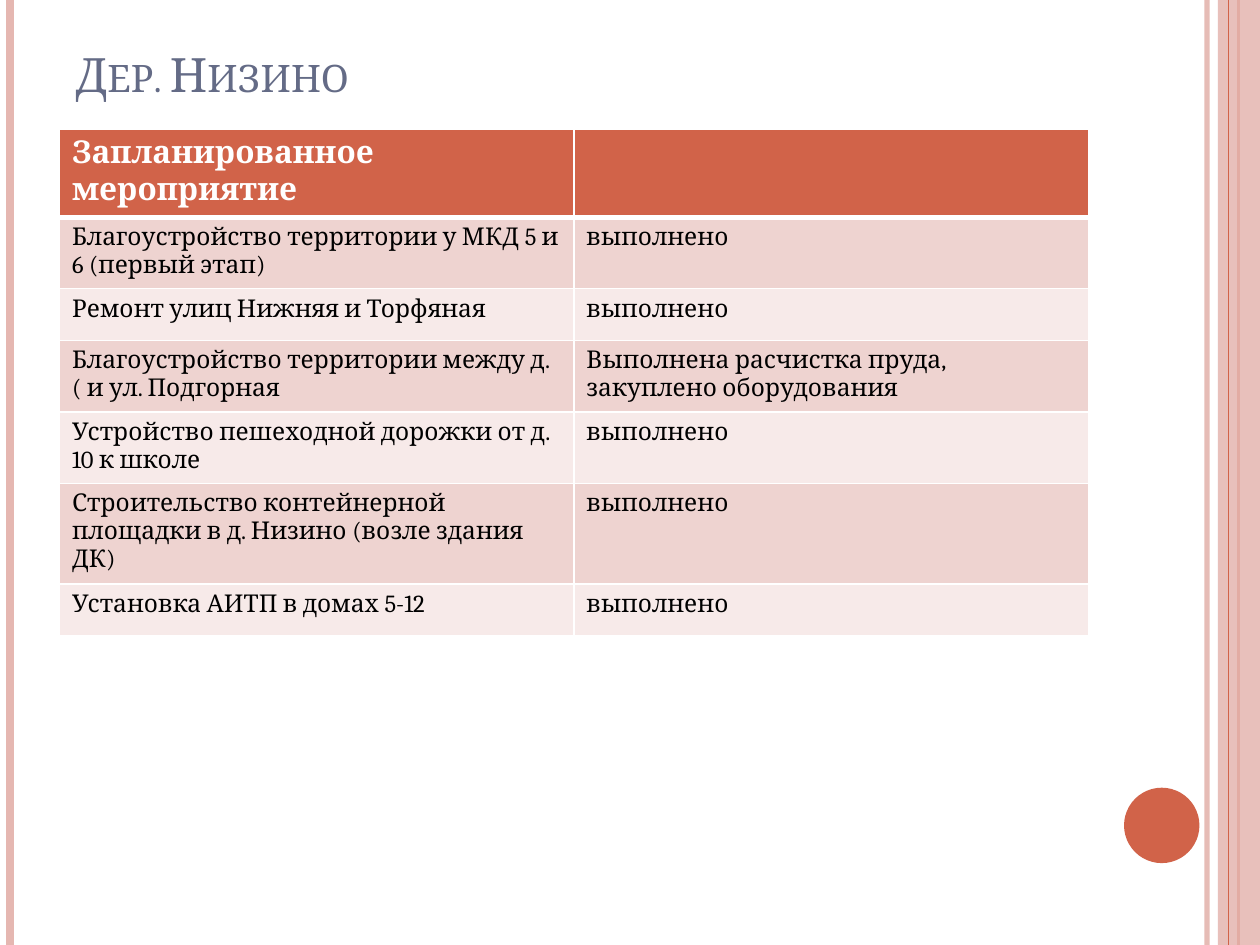
from lxml import etree
from pptx import Presentation
from pptx.dml.color import RGBColor
from pptx.enum.shapes import MSO_CONNECTOR, MSO_SHAPE
from pptx.enum.text import MSO_ANCHOR
from pptx.oxml.ns import qn
from pptx.util import Cm, Pt

STRAIGHT = MSO_CONNECTOR.STRAIGHT
RECTANGLE = MSO_SHAPE.RECTANGLE
OVAL = MSO_SHAPE.OVAL
BOTTOM = MSO_ANCHOR.BOTTOM

FONT = "Cambria"
COLORS = {
    "accent": "D16349",
    "stripe": "E5B7B1",
    "title": "646B86",
    "white": "FFFFFF",
    "black": "000000",
    "odd_row": "EED3D0",
    "even_row": "F7EAE9",
}
SLIDE_WIDTH, SLIDE_HEIGHT = 25.4, 19.05
ROW_HEIGHT = 1.04
DONE = "выполнено"
ROWS = [
    ("Запланированное мероприятие", ""),
    ("Благоустройство территории у МКД 5 и 6 (первый этап)", DONE),
    ("Ремонт улиц Нижняя и Торфяная", DONE),
    ("Благоустройство территории между д. ( и ул. Подгорная",
     "Выполнена расчистка пруда, закуплено оборудования"),
    ("Устройство пешеходной дорожки от д. 10 к школе", DONE),
    ("Строительство контейнерной площадки в д. Низино (возле здания ДК)", DONE),
    ("Установка АИТП в домах 5-12", DONE),
]


def rgb(name):
    return RGBColor.from_string(COLORS[name])


def set_alpha(solid_fill, percent):
    alpha = etree.SubElement(solid_fill[0], qn("a:alpha"))
    alpha.set("val", str(percent * 1000))


def add_stripe(slide, x, color, width, opacity=100):
    line = slide.shapes.add_connector(STRAIGHT, Cm(x), 0, Cm(x), Cm(SLIDE_HEIGHT))
    line.line.color.rgb = rgb(color)
    line.line.width = Pt(width)
    properties = line._element.spPr
    if opacity < 100:
        set_alpha(properties.find(".//" + qn("a:solidFill")), opacity)
    etree.SubElement(properties, qn("a:effectLst"))


def add_filled_shape(slide, kind, left, top, width, height, color, opacity=100):
    shape = slide.shapes.add_shape(kind, Cm(left), Cm(top), Cm(width), Cm(height))
    shape.shadow.inherit = False
    shape.fill.solid()
    shape.fill.fore_color.rgb = rgb(color)
    shape.line.fill.background()
    if opacity < 100:
        set_alpha(shape._element.spPr.find(qn("a:solidFill")), opacity)


def add_run(paragraph, text, size, color, bold=False):
    run = paragraph.add_run()
    run.text = text
    run.font.name = FONT
    run.font.size = Pt(size)
    run.font.bold = bold
    run.font.color.rgb = rgb(color)
    return run


def add_title(slide, text):
    box = slide.shapes.add_textbox(Cm(1.27), Cm(0.76), Cm(20.75), Cm(1.42))
    box.text_frame.word_wrap = True
    box.text_frame.vertical_anchor = BOTTOM
    run = add_run(box.text_frame.paragraphs[0], text, 27, "title")
    run.font._element.set("cap", "small")


def set_borders(cell, widths):
    properties = cell._tc.get_or_add_tcPr()
    for side, width in widths.items():
        border = etree.SubElement(properties, qn("a:" + side), w=str(Pt(width)))
        fill = etree.SubElement(border, qn("a:solidFill"))
        etree.SubElement(fill, qn("a:srgbClr"), val=COLORS["white"])


def fill_cell(cell, text, row_index):
    header = row_index == 0
    top = 3 if row_index == 1 else 1
    bottom = 3 if header else 1
    set_borders(cell, {"lnL": 1, "lnR": 1, "lnT": top, "lnB": bottom})
    cell.fill.solid()
    body = "odd_row" if row_index % 2 else "even_row"
    cell.fill.fore_color.rgb = rgb("accent" if header else body)
    if text:
        add_run(cell.text_frame.paragraphs[0], text, 18 if header else 14,
                "white" if header else "black", header)


def add_activity_table(slide):
    frame = slide.shapes.add_table(len(ROWS), 2, Cm(1.2), Cm(2.6),
                                   Cm(20.74), Cm(ROW_HEIGHT * len(ROWS)))
    for row_index, texts in enumerate(ROWS):
        frame.table.rows[row_index].height = Cm(ROW_HEIGHT)
        for column_index, text in enumerate(texts):
            fill_cell(frame.table.cell(row_index, column_index), text, row_index)


def add_decoration(slide):
    add_stripe(slide, 24.33, "stripe", 3, 93)
    add_stripe(slide, 0.21, "stripe", 4.5)
    add_stripe(slide, 24.97, "accent", 1.5)
    add_filled_shape(slide, RECTANGLE, 24.55, 0, 0.85, SLIDE_HEIGHT, "stripe", 87)
    add_stripe(slide, 24.76, "accent", 0.75)
    add_filled_shape(slide, OVAL, 22.66, 15.88, 1.52, 1.52, "accent")


def main():
    presentation = Presentation()
    presentation.slide_width = Cm(SLIDE_WIDTH)
    presentation.slide_height = Cm(SLIDE_HEIGHT)
    slide = presentation.slides.add_slide(presentation.slide_layouts[6])
    add_decoration(slide)
    add_title(slide, "Дер. Низино")
    add_activity_table(slide)
    presentation.save("out.pptx")


if __name__ == "__main__":
    main()
